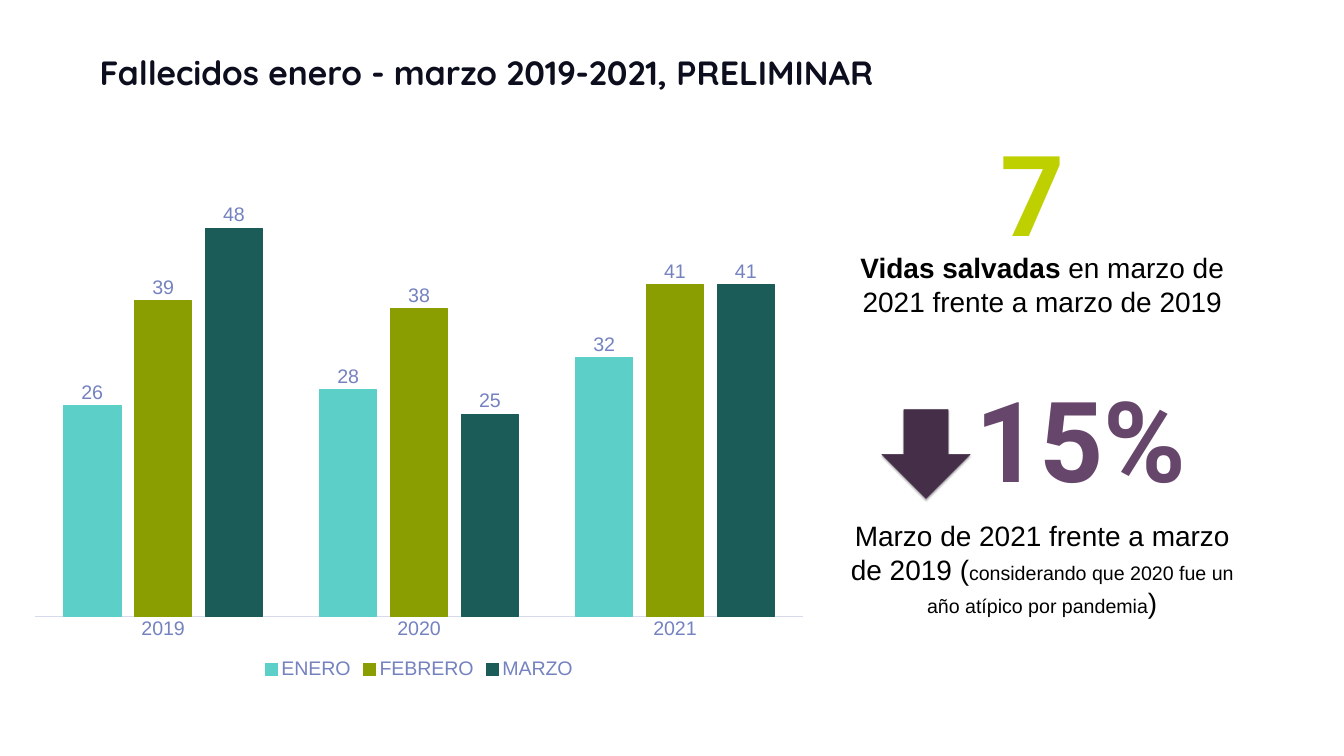
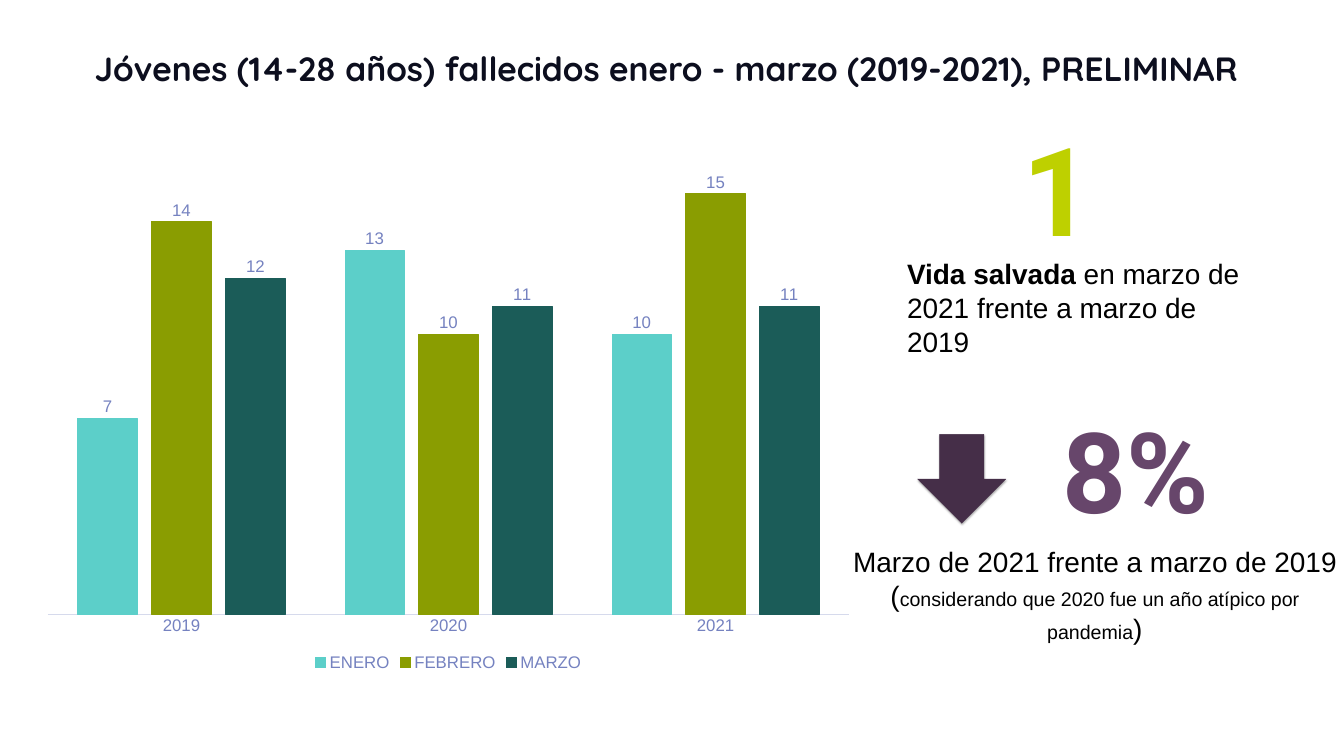
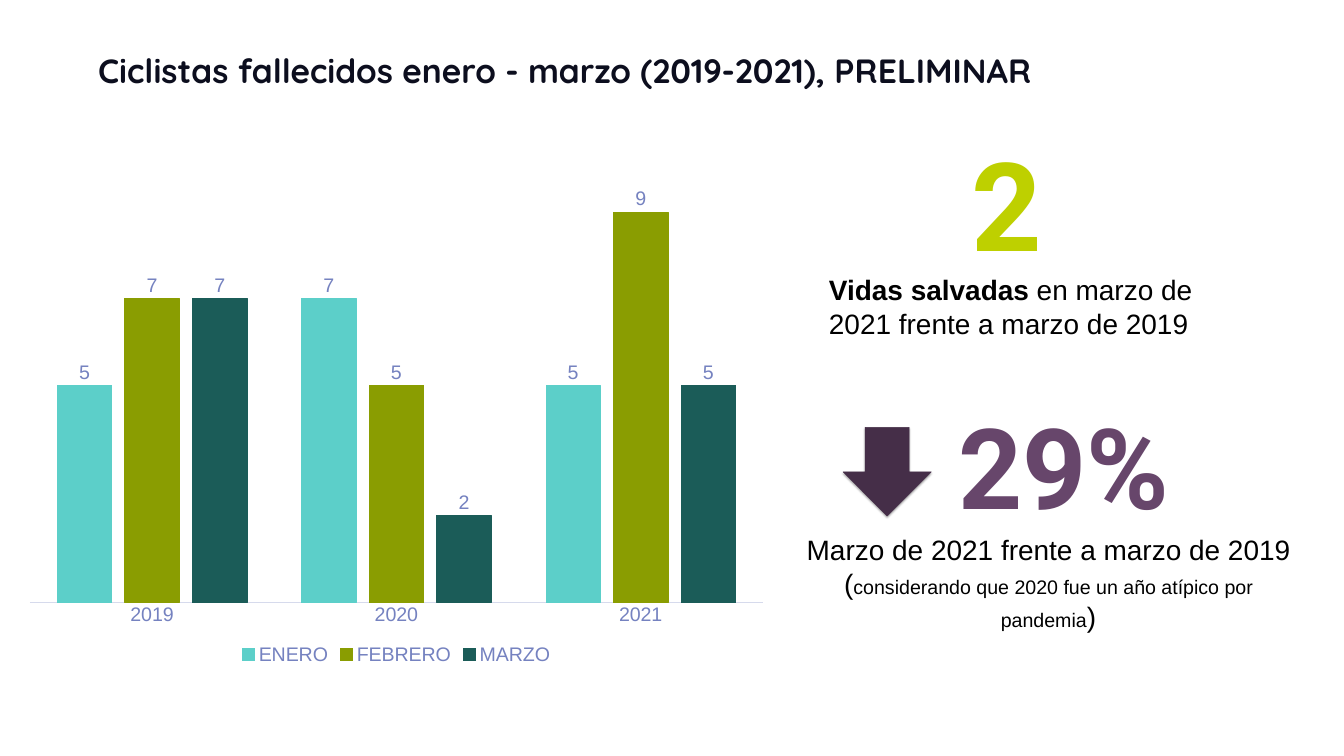
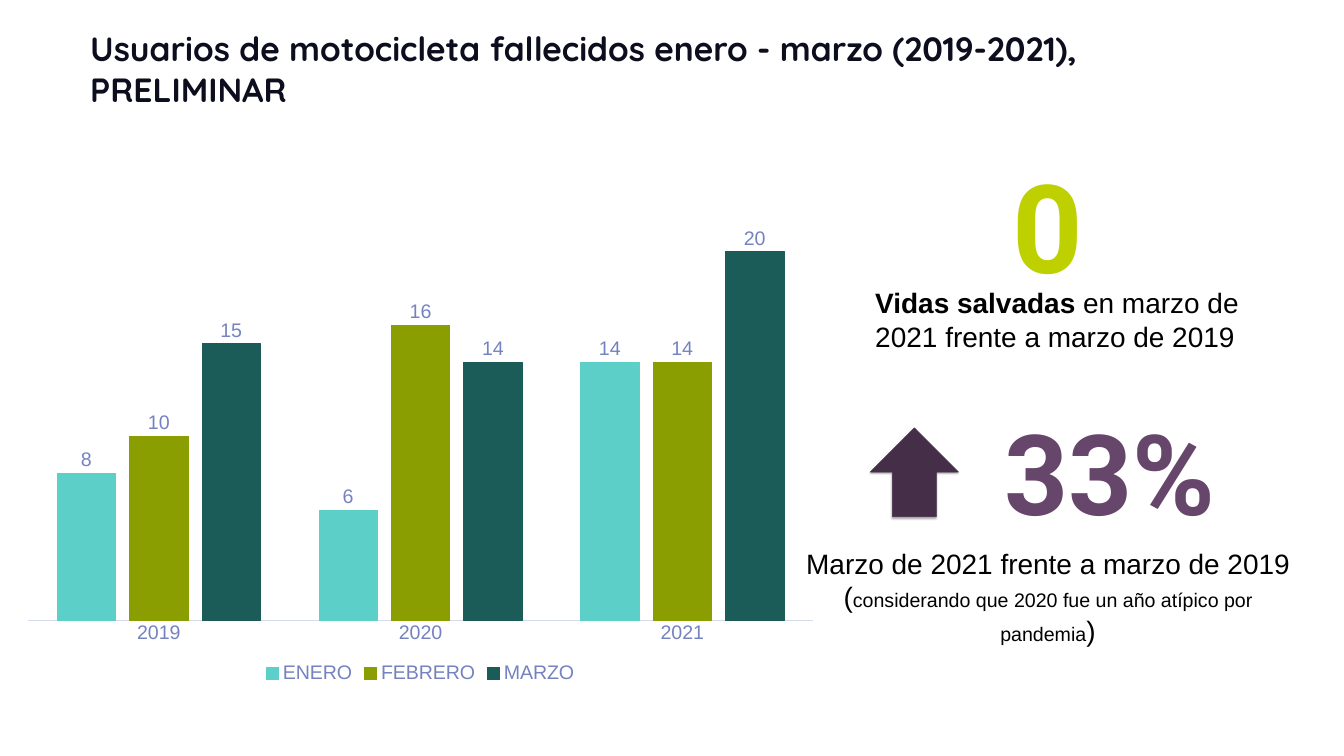
"""Build four slides on road deaths from January to March, 2019-2021."""
from lxml import etree
from pptx import Presentation
from pptx.chart.data import CategoryChartData
from pptx.dml.color import RGBColor
from pptx.enum.chart import XL_CHART_TYPE, XL_LABEL_POSITION, XL_LEGEND_POSITION, XL_TICK_MARK
from pptx.enum.shapes import MSO_SHAPE
from pptx.enum.text import MSO_AUTO_SIZE, PP_ALIGN
from pptx.oxml.ns import qn
from pptx.util import Inches, Pt

COLORS = {
    "title": "0C0E1E", "text": "000000", "saved": "BED000", "change": "67466B",
    "arrow": "452E48", "chart": "22294A", "label": "7582C0", "axis": "D6DAEC",
    "ENERO": "5CCFC9", "FEBRERO": "8A9D01", "MARZO": "1B5C58",
}
YEARS = ["2019", "2020", "2021"]
MONTHS = ["ENERO", "FEBRERO", "MARZO"]
ARROW_SIZE = (1.75, 1.76)
LEFT, CENTER = PP_ALIGN.LEFT, PP_ALIGN.CENTER

SLIDES = [
    dict(title="Fallecidos enero - marzo 2019-2021, PRELIMINAR",
         title_at=(1.88, 0.98, 22.74, 0.91),
         saved="7", saved_at=(19.76, 2.43, 1.77, 2.79), saved_size=160, saved_align=LEFT,
         lives="Vidas salvadas ", lives_at=(16.74, 4.93, 7.88, 1.45), lives_align=CENTER,
         change="15%", change_at=(19.25, 7.31, 5.15, 2.79),
         arrow_at=(17.5, 8.13), rotation=0, note_at=(16.74, 10.24, 7.88, 2.12),
         chart_at=(0.38, 2.37, 15.87, 11.2), chart_size=28, top=60,
         values=[(26, 28, 32), (39, 38, 41), (48, 25, 41)]),
    dict(title="Jóvenes (14-28 años) fallecidos enero - marzo (2019-2021), PRELIMINAR",
         title_at=(1.78, 0.9, 25.77, 0.91),
         saved="1", saved_at=(17.48, 2.19, 7.01, 3.06), saved_size=176, saved_align=CENTER,
         lives="Vida salvada ", lives_at=(17.9, 5.05, 7.05, 2.12), lives_align=LEFT,
         change="8%", change_at=(20.98, 7.92, 5.36, 2.79),
         arrow_at=(18.21, 8.62), rotation=0, note_at=(16.78, 10.76, 9.89, 2.12),
         chart_at=(0.62, 3.08, 16.56, 10.32), chart_size=24, top=16,
         values=[(7, 13, 10), (14, 10, 15), (12, 11, 11)]),
    dict(title="Ciclistas fallecidos enero - marzo (2019-2021), PRELIMINAR",
         title_at=(1.85, 0.95, 23.54, 0.91),
         saved="2", saved_at=(16.48, 2.49, 7.01, 3.06), saved_size=176, saved_align=CENTER,
         lives="Vidas salvadas ", lives_at=(16.35, 5.36, 7.45, 1.45), lives_align=LEFT,
         change="29%", change_at=(18.92, 7.83, 5.13, 2.79),
         arrow_at=(16.73, 8.48), rotation=0, note_at=(15.86, 10.52, 9.89, 2.12),
         chart_at=(0.29, 3.14, 15.15, 10.14), chart_size=28, top=10,
         values=[(5, 7, 5), (7, 5, 9), (7, 2, 5)]),
    dict(title="Usuarios de motocicleta fallecidos enero - marzo (2019-2021), PRELIMINAR",
         title_at=(1.69, 0.51, 23.04, 1.72),
         saved="0", saved_at=(17.27, 2.94, 7.05, 3.06), saved_size=176, saved_align=CENTER,
         lives="Vidas salvadas ", lives_at=(17.27, 5.62, 7.46, 1.45), lives_align=LEFT,
         change="33%", change_at=(19.83, 7.96, 6.25, 2.79),
         arrow_at=(17.27, 8.49), rotation=180, note_at=(15.85, 10.79, 9.89, 2.12),
         chart_at=(0.23, 2.94, 16.23, 10.71), chart_size=28, top=25,
         values=[(8, 6, 14), (10, 16, 14), (15, 14, 20)]),
]


def style(font, size, color, name="Arial", bold=False):
    font.size, font.name, font.bold = Pt(size), name, bold
    font.color.rgb = RGBColor.from_string(COLORS[color])


def add_text(s, at, runs, align=LEFT):
    tf = s.shapes.add_textbox(*map(Inches, at)).text_frame
    tf.word_wrap = True
    tf.auto_size = MSO_AUTO_SIZE.SHAPE_TO_FIT_TEXT
    p = tf.paragraphs[0]
    p.alignment = align
    for text, *look in runs:
        r = p.add_run()
        r.text = text
        style(r.font, *look)


prs = Presentation()
prs.slide_width, prs.slide_height = Inches(26.67), Inches(15)

for d in SLIDES:
    s = prs.slides.add_slide(prs.slide_layouts[6])

    add_text(s, d["title_at"], [(d["title"], 48, "title", "Quicksand", True)])
    add_text(s, d["saved_at"], [(d["saved"], d["saved_size"], "saved", "Roboto", True)],
             d["saved_align"])
    add_text(s, d["lives_at"], [
        (d["lives"], 40, "text", "Arial", True),
        ("en marzo de 2021 frente a marzo de 2019", 40, "text"),
    ], d["lives_align"])

    data = CategoryChartData()
    data.categories = YEARS
    for month, values in zip(MONTHS, d["values"]):
        data.add_series(month, values)
    chart = s.shapes.add_chart(XL_CHART_TYPE.COLUMN_CLUSTERED,
                               *map(Inches, d["chart_at"]), data).chart
    size = d["chart_size"]
    style(chart.font, size, "chart")
    chart.has_title = False
    chart.has_legend = True
    chart.legend.position = XL_LEGEND_POSITION.BOTTOM
    chart.legend.include_in_layout = False
    style(chart.legend.font, size, "label")

    axis = chart.category_axis
    axis.major_tick_mark = axis.minor_tick_mark = XL_TICK_MARK.NONE
    axis.format.line.color.rgb = RGBColor.from_string(COLORS["axis"])
    axis.format.line.width = Pt(0.75)
    style(axis.tick_labels.font, size, "label")
    axis = chart.value_axis
    axis.visible = axis.has_major_gridlines = False
    axis.minimum_scale, axis.maximum_scale = 0, d["top"]

    plot = chart.plots[0]
    plot.gap_width, plot.overlap, plot.vary_by_categories = 100, -24, False
    for series in plot.series:
        color = RGBColor.from_string(COLORS[series.name])
        series.format.fill.solid()
        series.format.fill.fore_color.rgb = color
        series.format.line.color.rgb = color
        series.format.line.width = Pt(0.75)
        labels = series.data_labels
        labels.show_value = True
        labels.position = XL_LABEL_POSITION.OUTSIDE_END
        style(labels.font, size, "label")

    add_text(s, d["change_at"], [(d["change"], 160, "change", "Roboto", True)])
    add_text(s, d["note_at"], [
        ("Marzo de 2021 frente a marzo de 2019 (", 40, "text"),
        ("considerando que 2020 fue un año atípico por pandemia", 28, "text"),
        (")", 40, "text"),
    ], CENTER)

    sp = s.shapes.add_shape(MSO_SHAPE.DOWN_ARROW, *map(Inches, d["arrow_at"] + ARROW_SIZE))
    sp.rotation = d["rotation"]
    color = RGBColor.from_string(COLORS["arrow"])
    sp.fill.solid()
    sp.fill.fore_color.rgb = color
    sp.line.color.rgb = color
    sp.line.width = Pt(0.75)
    sp.shadow.inherit = False
    effects = sp.element.spPr.find(qn("a:effectLst"))
    shadow = etree.SubElement(effects, qn("a:outerShdw"), blurRad=str(Pt(3.1)),
                              dist=str(Pt(1.8)), dir="5400000", rotWithShape="0")
    black = etree.SubElement(shadow, qn("a:srgbClr"), val=COLORS["text"])
    etree.SubElement(black, qn("a:alpha"), val="35000")

prs.save("out.pptx")
